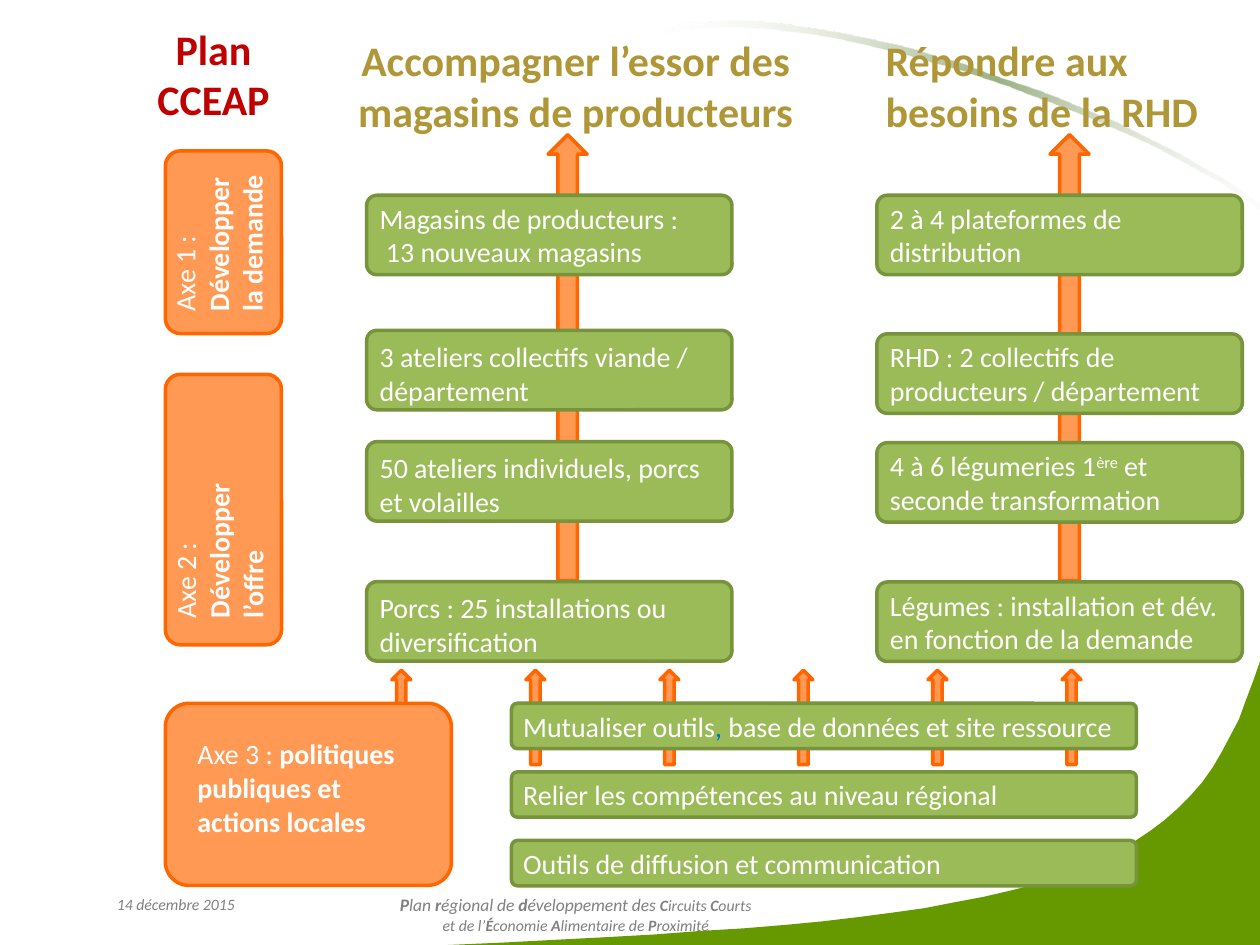
from lxml import etree
from pptx import Presentation
from pptx.dml.color import RGBColor
from pptx.enum.shapes import MSO_SHAPE
from pptx.enum.text import MSO_ANCHOR, PP_ALIGN
from pptx.oxml.ns import qn
from pptx.util import Pt

ROUNDED, ARROW = MSO_SHAPE.ROUNDED_RECTANGLE, MSO_SHAPE.UP_ARROW
TOP, MIDDLE = MSO_ANCHOR.TOP, MSO_ANCHOR.MIDDLE
LEFT, CENTER = PP_ALIGN.LEFT, PP_ALIGN.CENTER

GREEN = ("9BBB59", "77933C")
ORANGE = ("FF9953", "FF6600")
INSETS = (7.2, 3.6, 7.2, 3.6)
BODY = {"size": 16, "color": "FFFFFF"}
FOOTER = {"size": 9, "color": "808080", "italic": True}
TITLE = {"size": 24, "bold": True}
GOLD = TITLE | {"color": "AF9738"}
RED = TITLE | {"color": "C00000"}

HILL = [
    (720, 378), (720, 540), (256, 540), (288, 538.6), (318, 537), (347, 535.5),
    (374, 534), (400, 532), (425, 530.5), (449, 528.5), (470, 526.5), (491, 524),
    (510, 521.5), (528, 519), (546, 515.5), (562, 512.5), (577, 509), (591, 505.5),
    (604, 501), (616, 497), (628, 492), (638, 487), (648, 481), (657, 475),
    (665, 469), (673, 462), (680, 455), (687, 447), (693, 438.5), (698, 430),
    (703, 420.5), (708, 411), (712, 400), (716, 389.5),
]
SWOOSH = [
    (366, 25), (367, 21.5), (374, 18), (383, 16), (392, 13.5), (403, 13),
    (414, 12), (426, 12), (438, 13), (451, 14.5), (464, 16.5), (477, 18.5),
    (492, 21.5), (506, 24.5), (521, 28), (535, 32.5), (550, 36.5), (564, 42),
    (579, 47), (594, 52), (608, 57.5), (622, 63.5), (636, 69), (649, 75.5),
    (662, 82), (675, 88.5), (686, 95), (698, 101.5), (708, 108), (717, 114.5),
    (726, 121), (734, 127), (740, 134), (746, 140), (745, 142), (739, 136),
    (732, 130), (724, 123), (716, 117), (706, 110), (696, 103.5), (684, 97),
    (672, 90.5), (660, 84), (647, 78), (633, 72), (619, 66), (605, 60.5),
    (590, 55), (576, 49.5), (561, 44.5), (546, 39.5), (531, 35.5), (517, 31.5),
    (503, 28), (488, 24.5), (474, 21.5), (461, 19.5), (448, 18), (435, 16.5),
    (423, 16), (411, 16), (400, 16.5), (390, 17.5), (382, 19.5), (373, 21.5),
]
SWOOSH_STOPS = [(0, "FFFFFF", 0), (50, "9CB084", 100), (100, "FFFFFF", 0)]

COLUMNS = [
    {"left": 209.5, "arrow": 313.2, "insets": (5.76, 3.6, 7.2, 0), "steps": [
        (111.6, ["Magasins de producteurs :", "13 nouveaux magasins"]),
        (188.8, ["3 ateliers collectifs viande / département"]),
        (252.4, ["50 ateliers individuels, porcs et volailles"]),
        (332.4, ["Porcs : 25 installations ou diversification"])]},
    {"left": 501.1, "arrow": 600, "insets": (5.76, 3.6, 7.2, 3.6), "steps": [
        (111.6, ["2 à 4 plateformes de distribution"]),
        (190.8, ["RHD : 2 collectifs de producteurs / département"]),
        (253, [[("4 à 6 légumeries 1", {}), ("ère", {"baseline": 30000}),
                (" et seconde transformation", {})]]),
        (332.6, ["Légumes : installation et dév. en fonction de la demande"])]},
]
TOOLS = [
    [("Mutualiser outils", {}), (",", {"color": "0070C0"}),
     (" base de données et site ressource", {})],
    "Relier les compétences au niveau régional",
    "Outils de diffusion et communication",
]
AXIS_PANELS = [(94.5, 86.2, 66.4, 104.4), (94.5, 213.9, 66.4, 154.6),
               (94.5, 401.9, 163.5, 104.1)]
LABELS = [
    ((72, 106.6, 98.6, 58.3), ["Axe 1 : *Développer la demande"], BODY, LEFT, TOP, 270),
    ((45.4, 277.9, 129.6, 35.3), ["Axe 2 : *Développer l’offre"], BODY, LEFT, TOP, 270),
    ((105.8, 417.6, 146.9, 50.4), ["Axe 3 : *politiques publiques et actions locales"],
     BODY, LEFT, TOP, 0),
    ((76.3, 25.2, 91.4, 33.8), ["Plan CCEAP"], RED, CENTER, MIDDLE, 0),
    ((195.8, 25.2, 266.4, 46.8), ["Accompagner l’essor des magasins de producteurs"],
     GOLD, CENTER, MIDDLE, 0),
    ((499, 25.2, 210.2, 46.8), ["Répondre aux besoins de la RHD"], GOLD, LEFT, MIDDLE, 0),
    ((56.2, 507.6, 88.6, 28.8), ["14 décembre 2015"], FOOTER, CENTER, TOP, 0),
    ((156.2, 507.6, 345.6, 28.8),
     [[("*P*lan* r*égional de* d*éveloppement des ", {"size": 10}),
       ("*C*ircuits *C*ourts", {})],
      "et de l’*É*conomie *A*limentaire de *P*roximité"], FOOTER, CENTER, TOP, 0),
]


def rgb(value):
    return RGBColor.from_string(value)


def add_span(paragraph, text, style):
    span = paragraph.add_run()
    span.text = text
    values = {"name": "Calibri", "bold": style.get("bold", False),
              "italic": style.get("italic", False), "size": Pt(style["size"])}
    for key, value in values.items():
        setattr(span.font, key, value)
    span.font.color.rgb = rgb(style["color"])
    if "baseline" in style:
        span.font._element.set("baseline", str(style["baseline"]))


def write(box, paragraphs, style, align=LEFT, anchor=MIDDLE, insets=INSETS):
    frame = box.text_frame
    left, top, right, bottom = map(Pt, insets)
    settings = {"word_wrap": True, "vertical_anchor": anchor, "margin_left": left,
                "margin_top": top, "margin_right": right, "margin_bottom": bottom}
    for key, value in settings.items():
        setattr(frame, key, value)
    for index, content in enumerate(paragraphs):
        paragraph = frame.add_paragraph() if index else frame.paragraphs[0]
        paragraph.alignment = align
        if index and align == LEFT:
            paragraph._p.get_or_add_pPr().set("marL", str(Pt(3.6)))
        parts = [(content, {})] if isinstance(content, str) else content
        for text, changes in parts:
            for position, piece in enumerate(text.split("*")):
                if piece:
                    weight = {"bold": True} if position % 2 else {}
                    add_span(paragraph, piece, style | changes | weight)


def add_panel(page, kind, place, colors, adjustment):
    panel = page.shapes.add_shape(kind, *map(Pt, place))
    panel.shadow.inherit = False
    panel.adjustments[0] = adjustment
    panel.fill.solid()
    panel.fill.fore_color.rgb = rgb(colors[0])
    panel.line.color.rgb = rgb(colors[1])
    panel.line.width = Pt(2)
    return panel


def add_outline(page, points):
    builder = page.shapes.build_freeform(*map(Pt, points[0]))
    builder.add_line_segments([(Pt(x), Pt(y)) for x, y in points[1:]], close=True)
    outline = builder.convert_to_shape()
    outline.shadow.inherit = False
    outline.line.fill.background()
    return outline


def fade(shape, stops, angle):
    gradient = etree.Element(qn("a:gradFill"), rotWithShape="1")
    stop_list = etree.SubElement(gradient, qn("a:gsLst"))
    for position, color, opacity in stops:
        stop = etree.SubElement(stop_list, qn("a:gs"), pos=str(position * 1000))
        tint = etree.SubElement(stop, qn("a:srgbClr"), val=color)
        etree.SubElement(tint, qn("a:alpha"), val=str(opacity * 1000))
    etree.SubElement(gradient, qn("a:lin"), ang=str(angle * 60000), scaled="0")
    shape._element.spPr.find(qn("a:custGeom")).addnext(gradient)


def main():
    deck = Presentation()
    deck.slide_width, deck.slide_height = Pt(720), Pt(540)
    page = deck.slides.add_slide(deck.slide_layouts[6])

    hill = add_outline(page, HILL)
    hill.fill.solid()
    hill.fill.fore_color.rgb = rgb("669900")
    fade(add_outline(page, SWOOSH), SWOOSH_STOPS, 22)

    for index in range(6):
        add_panel(page, ARROW, (223.9 + 76.6 * index, 383, 10.8, 54), ORANGE, 0.5)
    for panel in AXIS_PANELS:
        add_panel(page, ROUNDED, panel, ORANGE, 0.13)

    for column in COLUMNS:
        add_panel(page, ARROW, (column["arrow"], 77, 22.3, 254.9), ORANGE, 0.5)
        for top, paragraphs in column["steps"]:
            box = add_panel(page, ROUNDED, (column["left"], top, 208.8, 45.4), GREEN, 0.13)
            insets = (5.76, 0, 0, 0) if len(paragraphs) > 1 else column["insets"]
            write(box, paragraphs, BODY, insets=insets)

    for index, tool in enumerate(TOOLS):
        place = (292.3, 401.9 + 39.2 * index, 357.1, 25.9)
        box = add_panel(page, ROUNDED, place, GREEN, 0.13)
        write(box, [tool], BODY, insets=(5.76, 3.6, 7.2, 3.6))

    for place, paragraphs, style, align, anchor, rotation in LABELS:
        box = page.shapes.add_textbox(*map(Pt, place))
        box.rotation = rotation
        write(box, paragraphs, style, align, anchor)

    deck.save("out.pptx")


if __name__ == "__main__":
    main()
